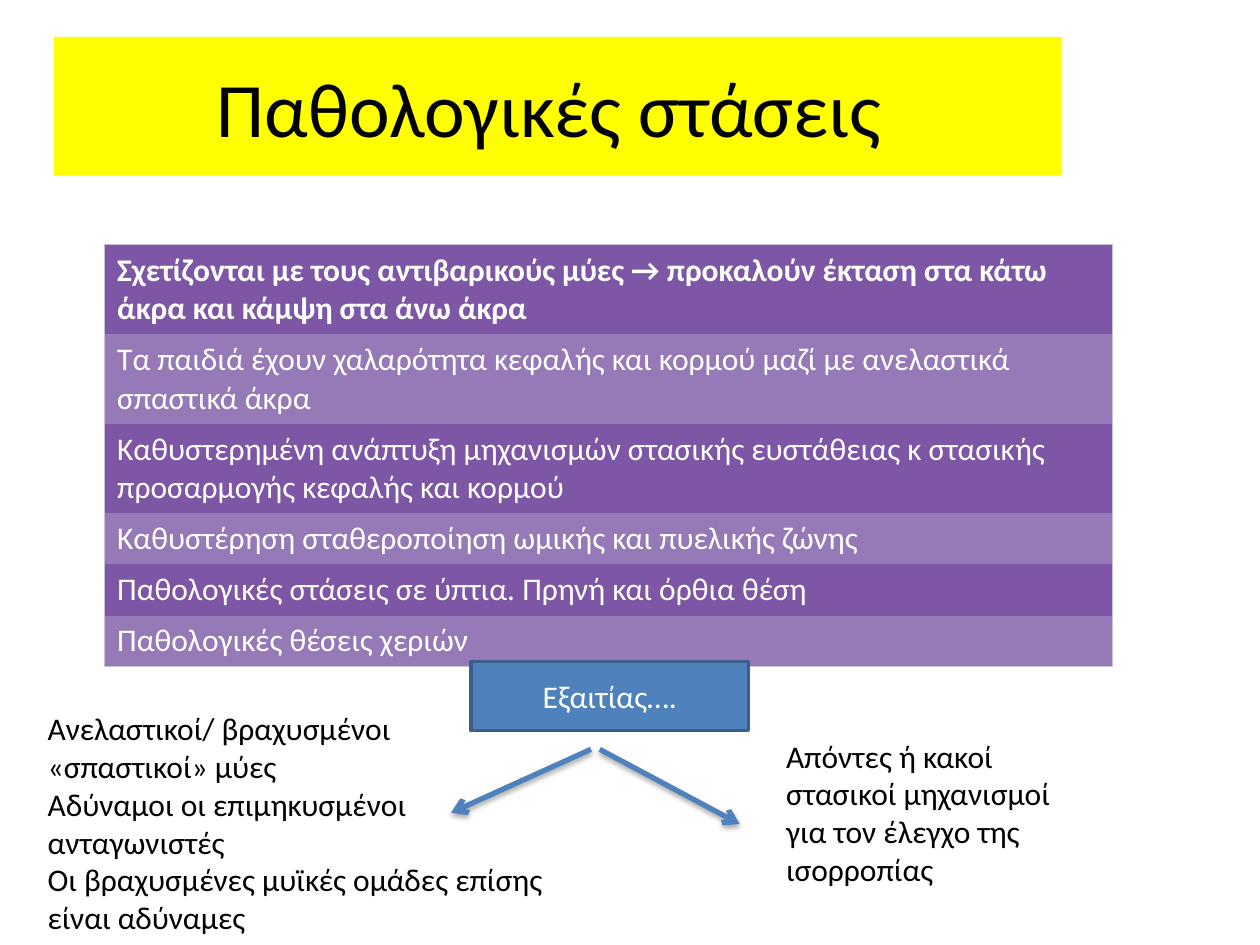
"""Build a slide on pathological postures: a table, its causes and two arrows."""
import pptx
import pptx.dml.color
import pptx.enum.shapes
import pptx.enum.text
import pptx.oxml
import pptx.oxml.ns
import pptx.util

WIDE, HIGH = 10, 7.5
FONT = "Calibri"
BLUE, WHITE, BLACK = "4F81BD", "FFFFFF", "000000"
BANDS = "7D57A5", "967AB7"
EDGE = "C8C1D3"
PLAIN = "{2D5ABB26-0587-4C30-8999-92F81FD0307C}"
ROWS = [
    ("Σχετίζονται με τους αντιβαρικούς μύες → προκαλούν έκταση στα κάτω άκρα και κάμψη στα άνω άκρα", 2),
    ("Τα παιδιά έχουν χαλαρότητα κεφαλής και κορμού μαζί με ανελαστικά σπαστικά άκρα", 2),
    ("Καθυστερημένη ανάπτυξη μηχανισμών στασικής ευστάθειας κ στασικής προσαρμογής κεφαλής και κορμού", 2),
    ("Καθυστέρηση σταθεροποίηση ωμικής και πυελικής ζώνης", 1),
    ("Παθολογικές στάσεις σε ύπτια. Πρηνή και όρθια θέση", 1),
    ("Παθολογικές θέσεις χεριών", 1),
]
LEFT = [
    "Ανελαστικοί/ βραχυσμένοι «σπαστικοί» μύες",
    "Αδύναμοι οι επιμηκυσμένοι ανταγωνιστές",
    "Οι βραχυσμένες μυϊκές ομάδες επίσης είναι αδύναμες",
]
RIGHT = ["Απόντες ή κακοί στασικοί μηχανισμοί για τον έλεγχο της ισορροπίας"]


def rgb(code):
    """Turn a hex string into a colour."""
    return pptx.dml.color.RGBColor.from_string(code)


def place(*shares):
    """Turn shares of the slide's width and height, by turns, into lengths."""
    return [pptx.util.Inches(s * (HIGH if i % 2 else WIDE))
            for i, s in enumerate(shares)]


def write(frame, lines, size=18, color=BLACK, bold=False, align=None):
    """Fill a text frame with one paragraph a line."""
    frame.word_wrap = True
    frame.text = "\n".join(lines)
    for para in frame.paragraphs:
        para.alignment = align
        font = para.font
        font.name, font.size, font.bold = FONT, pptx.util.Pt(size), bold
        font.color.rgb = rgb(color)


def block(slide, box, text, fill, size, color, line=None):
    """Add a filled rectangle with centred text."""
    shape = slide.shapes.add_shape(
        pptx.enum.shapes.MSO_SHAPE.RECTANGLE, *place(*box))
    shape.shadow.inherit = False
    shape.fill.solid()
    shape.fill.fore_color.rgb = rgb(fill)
    if line:
        shape.line.color.rgb = rgb(line)
        shape.line.width = pptx.util.Pt(2)
    else:
        shape.line.fill.background()
    shape.text_frame.vertical_anchor = pptx.enum.text.MSO_ANCHOR.MIDDLE
    write(shape.text_frame, [text], size, color,
          align=pptx.enum.text.PP_ALIGN.CENTER)


def note(slide, box, lines):
    """Add a plain text box."""
    write(slide.shapes.add_textbox(*place(*box)).text_frame, lines)


def node(body):
    """Parse a piece of DrawingML."""
    space = pptx.oxml.ns.nsdecls("a")
    return pptx.oxml.parse_xml(body.replace(" ", f" {space} ", 1))


def edge(cell, sides):
    """Draw thin borders on the given sides of a cell."""
    for i, side in enumerate(sides):
        cell._tc.get_or_add_tcPr().insert(i, node(
            f'<a:ln{side} w="9525"><a:solidFill><a:srgbClr val="{EDGE}"/>'
            f'</a:solidFill></a:ln{side}>'))


def grid(slide, box, rows):
    """Add the one-column banded table."""
    frame = slide.shapes.add_table(len(rows), 1, *place(*box))
    table = frame.table
    table._tbl.tblPr.find(pptx.oxml.ns.qn("a:tableStyleId")).text = PLAIN
    for i, (text, count) in enumerate(rows):
        table.rows[i].height = pptx.util.Inches(0.1 + 0.3 * count)
        cell = table.cell(i, 0)
        cell.fill.solid()
        cell.fill.fore_color.rgb = rgb(BANDS[i % 2])
        write(cell.text_frame, [text], color=WHITE, bold=i == 0)
        top = ["T"] if i == 0 else []
        end = ["B"] if i == len(rows) - 1 else []
        edge(cell, ["L", "R"] + top + end)


def arrow(slide, ends):
    """Add a thick arrow with a soft shadow below it."""
    line = slide.shapes.add_connector(
        pptx.enum.shapes.MSO_CONNECTOR.STRAIGHT, *place(*ends))
    line.line.color.rgb = rgb(BLUE)
    line.line.width = pptx.util.Pt(3)
    line.line._get_or_add_ln().append(node('<a:tailEnd type="arrow"/>'))
    line._element.spPr.append(node(
        '<a:effectLst ><a:outerShdw blurRad="40000" dist="23000" dir="5400000" '
        f'rotWithShape="0"><a:srgbClr val="{BLACK}"><a:alpha val="35000"/>'
        '</a:srgbClr></a:outerShdw></a:effectLst>'))


def main():
    """Build the slide and save it."""
    deck = pptx.Presentation()
    deck.slide_width, deck.slide_height = place(1, 1)
    slide = deck.slides.add_slide(deck.slide_layouts[6])
    block(slide, (0.043, 0.039, 0.8, 0.147), "Παθολογικές στάσεις ",
          "FFFF00", 44, BLACK)
    grid(slide, (0.083, 0.259, 0.8, 0.44), ROWS)
    block(slide, (0.374, 0.7, 0.22, 0.073), "Εξαιτίας….", BLUE, 18, WHITE,
          "3A5F8C")
    note(slide, (0.028, 0.744, 0.417, 0.256), LEFT)
    note(slide, (0.614, 0.773, 0.244, 0.175), RIGHT)
    arrow(slide, (0.469, 0.793, 0.358, 0.86))
    arrow(slide, (0.476, 0.793, 0.587, 0.872))
    deck.save("out.pptx")


if __name__ == "__main__":
    main()
